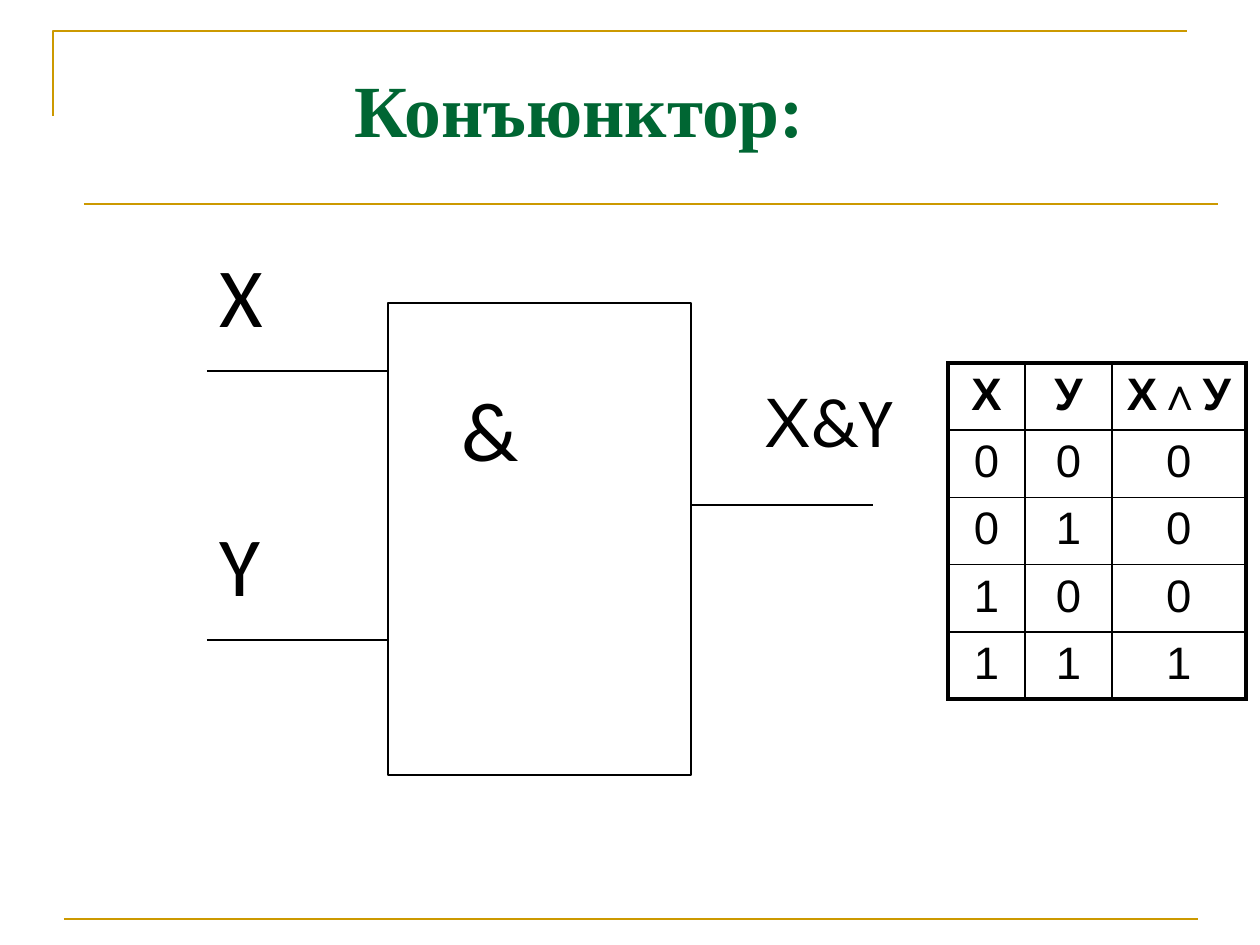
import pptx
import pptx.util
import pptx.dml.color
import pptx.enum.shapes
import pptx.enum.text
import pptx.oxml
import pptx.oxml.ns

PX_PER_INCH = 126
GOLD = pptx.dml.color.RGBColor(0xCC, 0x99, 0x00)
GREEN = pptx.dml.color.RGBColor(0x00, 0x66, 0x33)
BLACK = pptx.dml.color.RGBColor(0x00, 0x00, 0x00)
WHITE = pptx.dml.color.RGBColor(0xFF, 0xFF, 0xFF)
THIN, FRAME, INNER, OUTER = 0.75, 1.5, 1, 2.25


def px(length):
    return pptx.util.Emu(round(length * 914400 / PX_PER_INCH))


def px_all(*lengths):
    return [px(length) for length in lengths]


class SlideBuilder:
    def __init__(self, deck):
        self.slide = deck.slides.add_slide(deck.slide_layouts[5])
        self.shapes = self.slide.shapes

    def style_span(self, span, size, font, color=BLACK, bold=False):
        span.font.size = pptx.util.Pt(size)
        span.font.name = font
        span.font.bold = bold
        span.font.color.rgb = color

    def style_line(self, line, color, width):
        line.color.rgb = color
        line.width = pptx.util.Pt(width)

    def title(self, text, left, top, width, height, indent):
        box = self.shapes.title
        box.left, box.top, box.width, box.height = px_all(left, top, width, height)
        frame = box.text_frame
        frame.text = text
        frame.auto_size = pptx.enum.text.MSO_AUTO_SIZE.NONE
        frame.vertical_anchor = pptx.enum.text.MSO_ANCHOR.MIDDLE
        para = frame.paragraphs[0]
        para.alignment = pptx.enum.text.PP_ALIGN.CENTER
        properties = para._p.get_or_add_pPr()
        properties.set("marL", "0")
        properties.set("indent", str(px(indent)))
        self.style_span(para.runs[0], 42, "Times New Roman", GREEN, bold=True)

    def line(self, left, top, width, color=BLACK, weight=THIN):
        line = self.shapes.add_connector(
            pptx.enum.shapes.MSO_CONNECTOR.STRAIGHT,
            *px_all(left, top, left + width, top))
        self.style_line(line.line, color, weight)
        line._element.spPr.append(pptx.oxml.parse_xml(
            f"<a:effectLst {pptx.oxml.ns.nsdecls('a')}/>"))

    def outline(self, points, color, weight):
        start, *rest = [px_all(*point) for point in points]
        builder = self.shapes.build_freeform(*start)
        builder.add_line_segments(rest, close=False)
        shape = builder.convert_to_shape()
        shape.shadow.inherit = False
        shape.fill.background()
        self.style_line(shape.line, color, weight)

    def rectangle(self, left, top, width, height):
        shape = self.shapes.add_shape(
            pptx.enum.shapes.MSO_SHAPE.RECTANGLE,
            *px_all(left, top, width, height))
        shape.shadow.inherit = False
        shape.fill.solid()
        shape.fill.fore_color.rgb = WHITE
        self.style_line(shape.line, BLACK, THIN)

    def label(self, left, top, width, height, spans):
        box = self.shapes.add_textbox(*px_all(left, top, width, height))
        box.text_frame.word_wrap = True
        para = box.text_frame.paragraphs[0]
        para.space_after = pptx.util.Pt(10)
        for text, size, font in spans:
            span = para.add_run()
            span.text = text
            self.style_span(span, size, font)

    def border(self, cell, side, width):
        cell._tc.get_or_add_tcPr().append(pptx.oxml.parse_xml(
            f'<a:{side} {pptx.oxml.ns.nsdecls("a")} w="{pptx.util.Pt(width)}">'
            f'<a:solidFill><a:srgbClr val="{BLACK}"/></a:solidFill></a:{side}>'))

    def table(self, left, top, widths, row_height, rows):
        table = self.shapes.add_table(
            len(rows), len(widths),
            *px_all(left, top, sum(widths), row_height * len(rows))).table
        table.first_row = table.horz_banding = False
        for column, width in zip(table.columns, widths):
            column.width = px(width)
        for row in table.rows:
            row.height = px(row_height)
        for r, values in enumerate(rows):
            for c, value in enumerate(values):
                cell = table.cell(r, c)
                edges = {"lnL": c == 0, "lnR": c == len(widths) - 1,
                         "lnT": r == 0, "lnB": r == len(rows) - 1}
                for side, is_outer in edges.items():
                    self.border(cell, side, OUTER if is_outer else INNER)
                cell.fill.background()
                para = cell.text_frame.paragraphs[0]
                para.text = value
                para.alignment = pptx.enum.text.PP_ALIGN.CENTER
                para.space_before = pptx.util.Pt(1)
                self.style_span(para.runs[0], 26, "Arial", bold=r == 0)


def main():
    deck = pptx.Presentation()
    deck.slide_width, deck.slide_height = px_all(1260, 945)
    page = SlideBuilder(deck)

    # Gold frame and title
    page.outline([(53, 116), (53, 31), (1187, 31)], GOLD, FRAME)
    page.line(64, 919, 1134, GOLD, FRAME)
    page.line(84, 204, 1134, GOLD, FRAME)
    page.title("Конъюнктор:", 29, 57, 1053, 102, indent=48)

    # Gate body with two inputs and one output
    page.rectangle(388, 303, 303, 472)
    for left, top in [(207, 371), (207, 640), (691, 505)]:
        page.line(left, top, 182)

    # Signal names
    for text, left, top in [("&", 449, 371), ("X", 207, 237), ("Y", 207, 506)]:
        page.label(left, top, 182, 269, [(text, 48, "Calibri")])
    page.label(752, 371, 182, 269, [("X", 40, "Arial"), ("&Y", 40, "Calibri")])

    # Truth table
    inputs = [(x, y) for x in (0, 1) for y in (0, 1)]
    rows = [("Х", "У", "Х∧У")]
    rows += [(str(x), str(y), str(x & y)) for x, y in inputs]
    page.table(948, 363, [77, 87, 134], 67, rows)

    deck.save("out.pptx")


if __name__ == "__main__":
    main()
